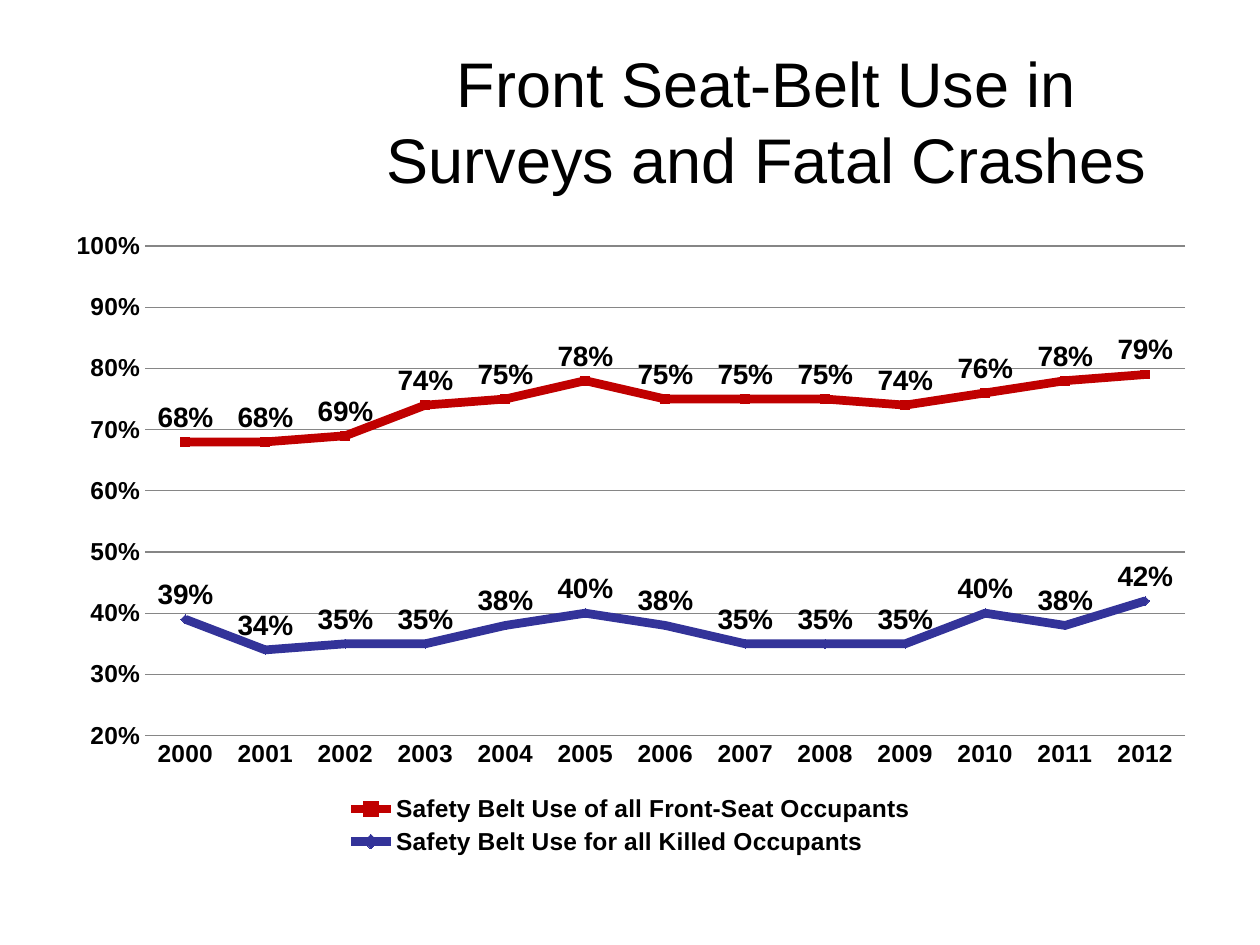
import pptx
import pptx.chart.data
import pptx.dml.color
import pptx.enum.chart
import pptx.enum.text
import pptx.oxml
import pptx.oxml.ns
import pptx.util
from pptx.util import Inches

FONT = "Arial"
BLACK = pptx.dml.color.RGBColor(0x00, 0x00, 0x00)
GREY = pptx.dml.color.RGBColor(0x86, 0x86, 0x86)
RED = pptx.dml.color.RGBColor(0xC0, 0x00, 0x00)
BLUE = pptx.dml.color.RGBColor(0x33, 0x33, 0x99)

YEARS = [str(year) for year in range(2000, 2013)]
MARKERS = pptx.enum.chart.XL_MARKER_STYLE
BELT_USE = [
    ("Safety Belt Use of all Front-Seat Occupants", RED, MARKERS.SQUARE,
     [0.68, 0.68, 0.69, 0.74, 0.75, 0.78, 0.75, 0.75, 0.75, 0.74, 0.76, 0.78, 0.79]),
    ("Safety Belt Use for all Killed Occupants", BLUE, MARKERS.DIAMOND,
     [0.39, 0.34, 0.35, 0.35, 0.38, 0.4, 0.38, 0.35, 0.35, 0.35, 0.4, 0.38, 0.42]),
]


def style_font(font, size, bold=False):
    font.name = FONT
    font.size = pptx.util.Pt(size)
    font.bold = bold
    font.color.rgb = BLACK


def add_title(slide, text):
    title = slide.shapes.title
    title.left, title.top = Inches(2.67), Inches(0.33)
    title.width, title.height = Inches(6.83), Inches(1.25)
    frame = title.text_frame
    frame.word_wrap = True
    frame.vertical_anchor = pptx.enum.text.MSO_ANCHOR.MIDDLE
    paragraph = frame.paragraphs[0]
    paragraph.alignment = pptx.enum.text.PP_ALIGN.CENTER
    run = paragraph.add_run()
    run.text = text
    style_font(run.font, 36)


def manual_layout(x, y, width, height, inner=False):
    """Return a c:layout element placed by fractions of the chart."""
    target = '<c:layoutTarget val="inner"/>' if inner else ""
    return pptx.oxml.parse_xml(
        f'<c:layout {pptx.oxml.ns.nsdecls("c")}><c:manualLayout>{target}'
        '<c:xMode val="edge"/><c:yMode val="edge"/>'
        f'<c:x val="{x}"/><c:y val="{y}"/><c:w val="{width}"/><c:h val="{height}"/>'
        '</c:manualLayout></c:layout>')


def place_plot_area(chart, layout):
    plot_area = chart.element.find(".//" + pptx.oxml.ns.qn("c:plotArea"))
    for automatic in plot_area.findall(pptx.oxml.ns.qn("c:layout")):
        plot_area.remove(automatic)
    plot_area.insert(0, layout)


def place_legend(chart, layout):
    legend = chart.element.find(".//" + pptx.oxml.ns.qn("c:legend"))
    for automatic in legend.findall(pptx.oxml.ns.qn("c:layout")):
        legend.remove(automatic)
    legend.find(pptx.oxml.ns.qn("c:legendPos")).addnext(layout)


def style_axes(chart):
    for axis in (chart.category_axis, chart.value_axis):
        axis.major_tick_mark = pptx.enum.chart.XL_TICK_MARK.NONE
        axis.minor_tick_mark = pptx.enum.chart.XL_TICK_MARK.NONE
        style_font(axis.tick_labels.font, 14, bold=True)
    percent = chart.value_axis
    percent.minimum_scale, percent.maximum_scale = 0.2, 1
    percent.major_unit = 0.1
    percent.tick_labels.number_format = "0%"
    percent.tick_labels.number_format_is_linked = False
    percent.format.line.fill.background()
    percent.has_major_gridlines = True
    for line in (percent.major_gridlines.format.line, chart.category_axis.format.line):
        line.color.rgb = GREY
        line.width = pptx.util.Pt(0.75)


def style_series(series, color, marker_style):
    series.smooth = False
    series.format.line.color.rgb = color
    series.format.line.width = pptx.util.Pt(5)
    series.marker.style = marker_style
    series.marker.size = 5
    series.marker.format.fill.solid()
    series.marker.format.fill.fore_color.rgb = color
    series.marker.format.line.color.rgb = color
    labels = series.data_labels
    labels.show_value = True
    labels.number_format = "0%"
    labels.number_format_is_linked = False
    labels.position = pptx.enum.chart.XL_LABEL_POSITION.ABOVE
    style_font(labels.font, 16, bold=True)


def add_belt_use_chart(slide):
    data = pptx.chart.data.CategoryChartData(number_format="0%")
    data.categories = YEARS
    for name, _, _, shares in BELT_USE:
        data.add_series(name, shares)
    chart = slide.shapes.add_chart(
        pptx.enum.chart.XL_CHART_TYPE.LINE_MARKERS,
        Inches(0.42), Inches(1.75), Inches(9.17), Inches(5.08), data).chart
    chart.has_title = False
    style_font(chart.font, 10)
    style_axes(chart)
    chart.plots[0].vary_by_categories = False
    for series, (_, color, marker_style, _) in zip(chart.plots[0].series, BELT_USE):
        style_series(series, color, marker_style)
    chart.has_legend = True
    chart.legend.position = pptx.enum.chart.XL_LEGEND_POSITION.BOTTOM
    chart.legend.include_in_layout = False
    style_font(chart.legend.font, 14, bold=True)
    place_plot_area(chart, manual_layout(0.08, 0.04, 0.9, 0.765, inner=True))
    place_legend(chart, manual_layout(0.25, 0.89, 0.5, 0.11))


def main():
    deck = pptx.Presentation()
    deck.slide_width, deck.slide_height = Inches(10), Inches(7.5)
    slide = deck.slides.add_slide(deck.slide_layouts.get_by_name("Title Only"))
    add_title(slide, "Front Seat-Belt Use in Surveys and Fatal Crashes")
    add_belt_use_chart(slide)
    deck.save("out.pptx")


if __name__ == "__main__":
    main()
